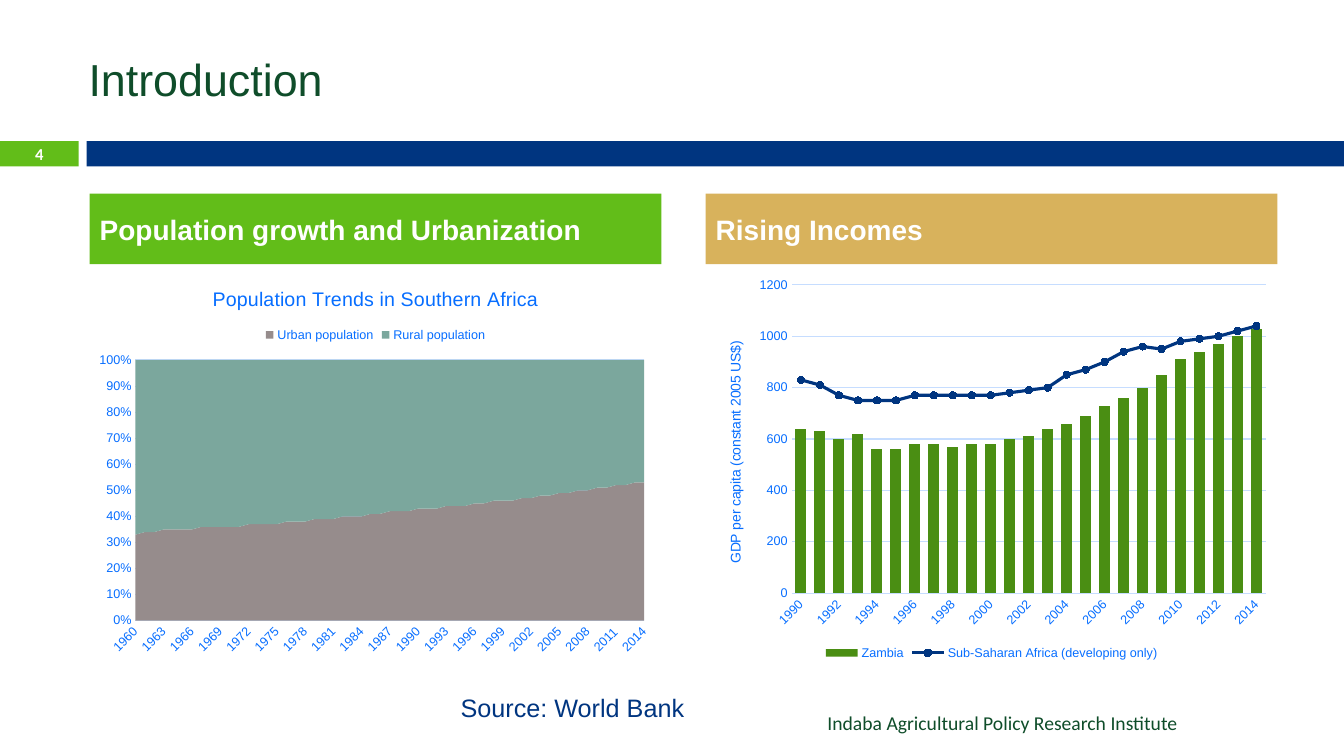
from pptx import Presentation
from pptx.chart.data import CategoryChartData
from pptx.dml.color import RGBColor
from pptx.enum import chart as ch, shapes, text
from pptx.oxml.ns import qn
from pptx.oxml.xmlchemy import OxmlElement
from pptx.util import Inches, Pt

C = {"green": "62BD19", "navy": "003580", "gold": "D8B25C", "forest": "0F4D2A",
     "white": "FFFFFF", "label": "076EFF", "grid": "C6DDFF", "urban": "968C8C",
     "rural": "7BA79D", "zambia": "4A8E13"}

# left, top, width, height, fill
BARS = [(0, 1.4, 0.78, 0.25, "green"), (0.86, 1.4, 12.47, 0.25, "navy")]
# left, heading, fill
PANELS = [(0.89, "Population growth and Urbanization", "green"),
          (7, "Rising Incomes", "gold")]
PANEL_W, HEAD_TOP, HEAD_H, CHART_TOP, CHART_H = 5.67, 1.92, 0.7, 2.67, 3.92
# box, wording, size, colour, font, bold, alignment, anchor
TEXTS = [
    ((0.78, 0.3, 11.89, 0.95), "Introduction", 32, "forest", "Arial", False, "LEFT", "MIDDLE"),
    ((0, 1.39, 0.78, 0.27), "4", 11.9, "white", "Calibri", True, "CENTER", "MIDDLE"),
    ((4.47, 6.82, 4.17, 0.4), "Source: World Bank", 18, "navy", "Arial", False, "LEFT", "TOP"),
    ((6.11, 7, 5.67, 0.34), "Indaba Agricultural Policy Research Institute", 14, "forest",
     "Calibri", False, "RIGHT", "TOP"),
]

URBAN = [33, 34, 34, 35, 35, 35, 35, 36, 36, 36, 36, 36, 37, 37, 37, 37, 38, 38, 38,
         39, 39, 39, 40, 40, 40, 41, 41, 42, 42, 42, 43, 43, 43, 44, 44, 44, 45, 45,
         46, 46, 46, 47, 47, 48, 48, 49, 49, 50, 50, 51, 51, 52, 52, 53, 53]
POPULATION = {"Urban population": URBAN, "Rural population": [100 - v for v in URBAN]}
INCOME = {
    "Zambia": [640, 630, 600, 620, 560, 560, 580, 580, 570, 580, 580, 600, 610, 640,
               660, 690, 730, 760, 800, 850, 910, 940, 970, 1000, 1030],
    "Sub-Saharan Africa (developing only)": [
        830, 810, 770, 750, 750, 750, 770, 770, 770, 770, 770, 780, 790, 800, 850,
        870, 900, 940, 960, 950, 980, 990, 1000, 1020, 1040],
}


def rgb(name):
    return RGBColor.from_string(C[name])


def style(font, size, color, name="Arial", bold=False):
    font.size, font.name, font.bold = Pt(size), name, bold
    font.color.rgb = rgb(color)


def paint(fmt, color):
    fmt.fill.solid()
    fmt.fill.fore_color.rgb = rgb(color)


def add_bar(s, left, top, width, height, fill):
    sp = s.shapes.add_shape(shapes.MSO_SHAPE.RECTANGLE,
                            *map(Inches, (left, top, width, height)))
    sp.shadow.inherit = False
    paint(sp, fill)
    sp.line.fill.background()
    return sp


def write(sp, words, size, color, font, bold, align, anchor):
    tf = sp.text_frame
    tf.word_wrap = True
    tf.vertical_anchor = text.MSO_ANCHOR[anchor]
    tf.text = words
    p = tf.paragraphs[0]
    p.alignment = text.PP_ALIGN[align]
    style(p.runs[0].font, size, color, font, bold)


def c_element(tag, val=None):
    element = OxmlElement("c:" + tag)
    if val is not None:
        element.set("val", str(val))
    return element


def set_plot_area(chart, x, y, w, h):
    """Fix the inner plot area, in fractions of the chart."""
    area = chart._chartSpace.chart.plotArea
    for old in area.findall(qn("c:layout")):
        area.remove(old)
    layout, manual = c_element("layout"), c_element("manualLayout")
    layout.append(manual)
    for tag, val in [("layoutTarget", "inner"), ("xMode", "edge"), ("yMode", "edge"),
                     ("x", x), ("y", y), ("w", w), ("h", h)]:
        manual.append(c_element(tag, val))
    area.insert(0, layout)


def add_chart(s, kind, left, first_year, data, legend, skip, top, step, fmt, plot_area):
    cd = CategoryChartData()
    cd.categories = [str(first_year + i) for i in range(len(next(iter(data.values()))))]
    for name, values in data.items():
        cd.add_series(name, values)
    chart = s.shapes.add_chart(
        kind, *map(Inches, (left, CHART_TOP, PANEL_W, CHART_H)), cd).chart
    style(chart.font, 10, "navy")
    chart.has_title = False
    chart.has_legend = True
    chart.legend.position = legend
    chart.legend.include_in_layout = False
    style(chart.legend.font, 9, "label")
    cat, val = chart.category_axis, chart.value_axis
    for axis in (cat, val):
        axis.major_tick_mark = axis.minor_tick_mark = ch.XL_TICK_MARK.NONE
        style(axis.tick_labels.font, 9, "label")
    cat.has_major_gridlines = False
    val.has_major_gridlines = True
    for line in (cat.format.line, val.major_gridlines.format.line):
        line.color.rgb = rgb("grid")
        line.width = Pt(0.75)
    val.format.line.fill.background()
    val.minimum_scale, val.maximum_scale, val.major_unit = 0, top, step
    val.tick_labels.number_format = fmt
    val.tick_labels.number_format_is_linked = False
    cat_xml = cat._element
    cat_xml.find(qn("c:txPr")).find(qn("a:bodyPr")).set("rot", "-2700000")
    cat_xml.find(qn("c:noMultiLvlLbl")).addprevious(c_element("tickLblSkip", skip))
    set_plot_area(chart, *plot_area)
    return chart


def last_bar_series_to_line(chart):
    """Move the last column series to a line plot on the same axes."""
    bars = chart._chartSpace.chart.plotArea.find(qn("c:barChart"))
    ser = bars.findall(qn("c:ser"))[-1]
    for bar_only in ser.findall(qn("c:invertIfNegative")):
        ser.remove(bar_only)
    lines = c_element("lineChart")
    bars.addnext(lines)
    lines.append(c_element("grouping", "standard"))
    lines.append(c_element("varyColors", 0))
    lines.append(ser)
    lines.append(c_element("marker", 1))
    for ax in bars.findall(qn("c:axId")):
        lines.append(c_element("axId", ax.get("val")))


def add_population_chart(s):
    chart = add_chart(s, ch.XL_CHART_TYPE.AREA_STACKED_100, PANELS[0][0], 1960, POPULATION,
                      ch.XL_LEGEND_POSITION.TOP, 3, 1, 0.1, "0%", (0.08, 0.23, 0.89, 0.66))
    chart.has_title = True
    tf = chart.chart_title.text_frame
    tf.text = "Population Trends in Southern Africa"
    style(tf.paragraphs[0].runs[0].font, 14, "label")
    for ser, color in zip(chart.plots[0].series, ("urban", "rural")):
        paint(ser.format, color)


def add_income_chart(s):
    chart = add_chart(s, ch.XL_CHART_TYPE.COLUMN_CLUSTERED, PANELS[1][0], 1990, INCOME,
                      ch.XL_LEGEND_POSITION.BOTTOM, 2, 1200, 200, "General",
                      (0.15, 0.04, 0.83, 0.78))
    tf = chart.value_axis.axis_title.text_frame
    tf.text = "GDP per capita (constant 2005 US$)"
    style(tf.paragraphs[0].runs[0].font, 10, "label")
    tf._txBody.find(qn("a:bodyPr")).set("rot", "-5400000")
    last_bar_series_to_line(chart)
    bars, lines = chart.plots
    bars.vary_by_categories = False
    bars.gap_width, bars.overlap = 73, -27
    paint(bars.series[0].format, "zambia")
    region = lines.series[0]
    region.smooth = False
    region.format.line.color.rgb = rgb("navy")
    region.format.line.width = Pt(2.25)
    region.marker.style = ch.XL_MARKER_STYLE.CIRCLE
    region.marker.size = 5
    paint(region.marker.format, "navy")
    region.marker.format.line.color.rgb = rgb("navy")


def main():
    prs = Presentation()
    prs.slide_width, prs.slide_height = Inches(13.33), Inches(7.5)
    s = prs.slides.add_slide(prs.slide_layouts[6])
    for bar in BARS:
        add_bar(s, *bar)
    for left, heading, fill in PANELS:
        sp = add_bar(s, left, HEAD_TOP, PANEL_W, HEAD_H, fill)
        write(sp, heading, 20, "white", "Arial", True, "LEFT", "MIDDLE")
    for box, *content in TEXTS:
        write(s.shapes.add_textbox(*map(Inches, box)), *content)
    add_income_chart(s)
    add_population_chart(s)
    prs.save("out.pptx")


if __name__ == "__main__":
    main()
